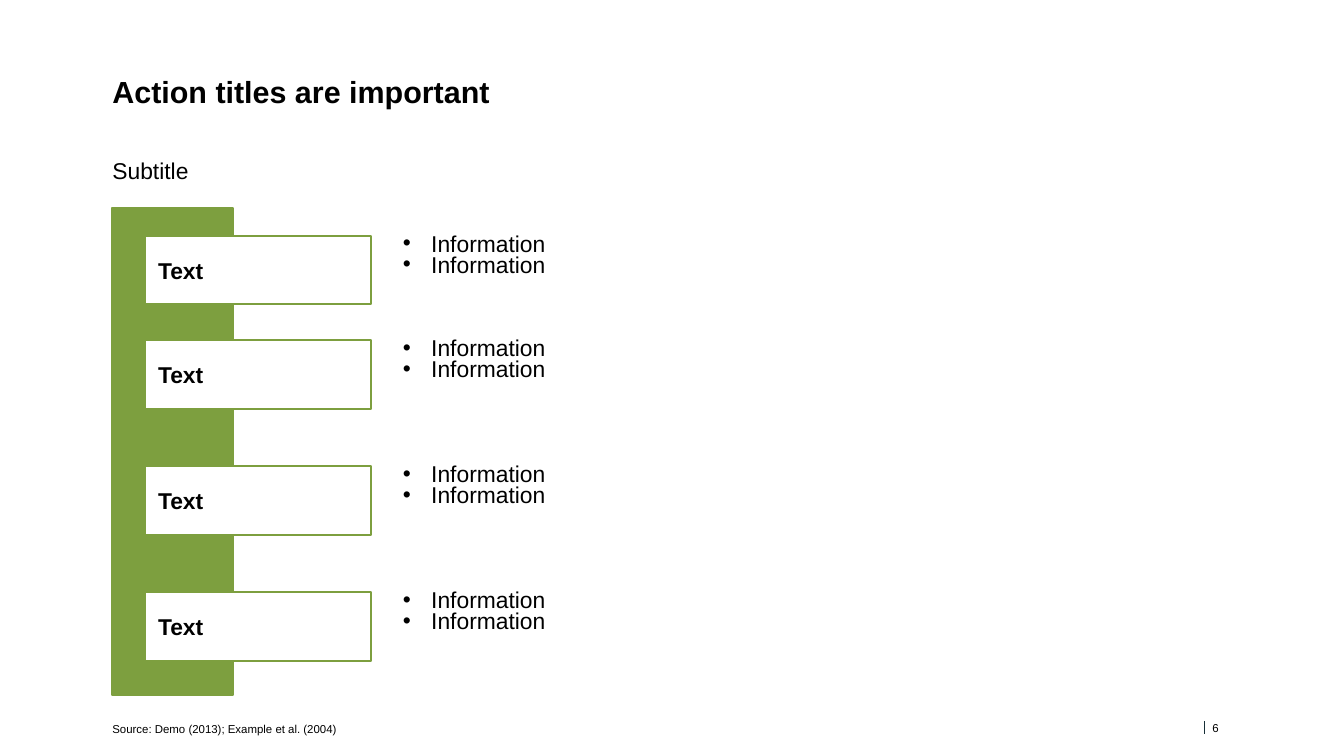
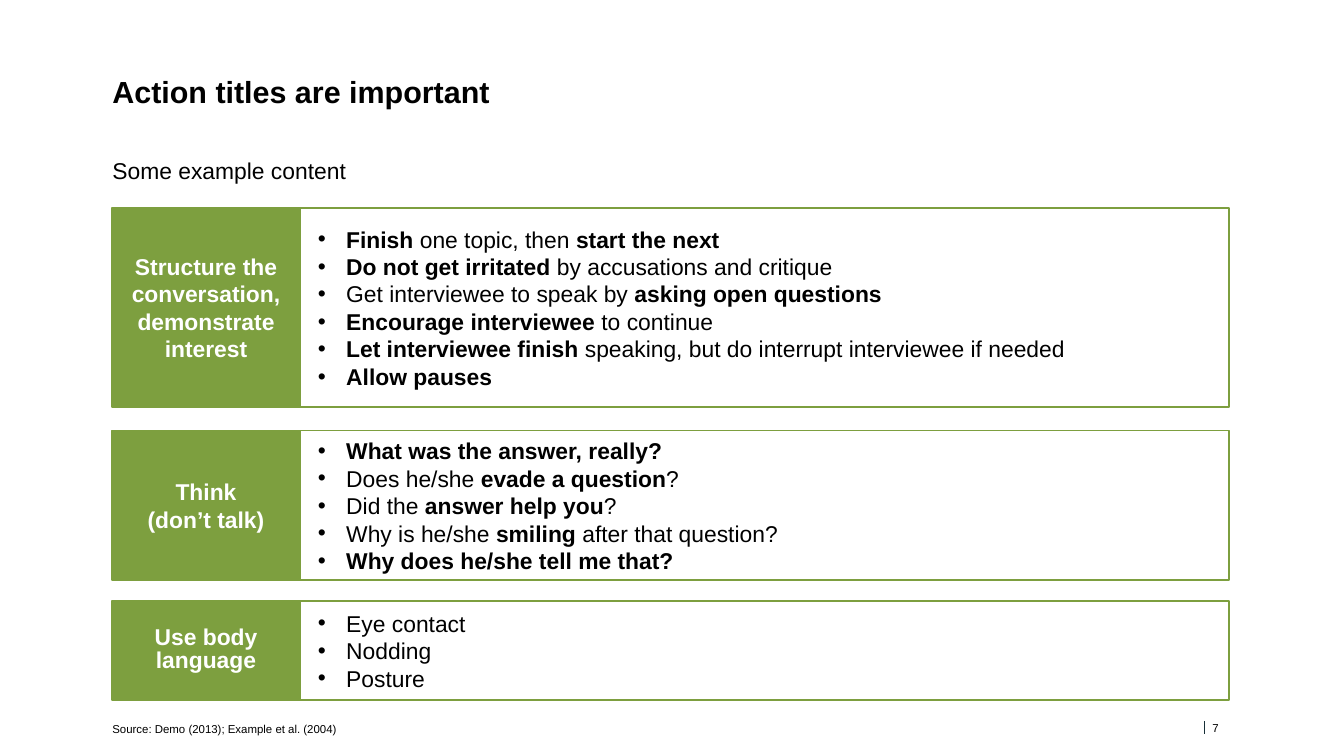
from lxml.etree import SubElement
from pptx import Presentation
from pptx.dml.color import RGBColor
from pptx.enum.shapes import MSO_CONNECTOR, MSO_SHAPE
from pptx.enum.text import MSO_ANCHOR, PP_ALIGN
from pptx.oxml.ns import qn
from pptx.util import Inches, Pt

COLORS = {"green": "7D9F3F", "white": "FFFFFF", "black": "000000", "rule": "172F37"}
FONT = "Arial"
LEFT = 1.23
BODY_TOP = 2.28


def add_box(page, area, lines=(), size=18, color="black", bold=None, fill=None,
            outlined=False, bullets=False, align=PP_ALIGN.LEFT,
            anchor=MSO_ANCHOR.TOP, insets=(0, 0, 0, 0), spacing=None):
    lengths = [Inches(value) for value in area]
    if outlined:
        box = page.shapes.add_shape(MSO_SHAPE.RECTANGLE, *lengths)
        box.shadow.inherit = False
        box.line.color.rgb = RGBColor.from_string(COLORS["green"])
        box.line.width = Pt(1.5)
    else:
        box = page.shapes.add_textbox(*lengths)
    if fill:
        box.fill.solid()
        box.fill.fore_color.rgb = RGBColor.from_string(COLORS[fill])
    else:
        box.fill.background()

    frame = box.text_frame
    frame.word_wrap = True
    frame.vertical_anchor = anchor
    frame.margin_left, frame.margin_top, frame.margin_right, frame.margin_bottom = (
        Inches(value) for value in insets)
    for index, line in enumerate(lines):
        para = frame.paragraphs[0] if index == 0 else frame.add_paragraph()
        if "**" in line:
            for part, words in enumerate(line.split("**")):
                if words:
                    span = para.add_run()
                    span.text = words
                    span.font.bold = part % 2 == 1
        else:
            para.text = line
        para.alignment = align
        if spacing:
            para.line_spacing = Pt(spacing)
        if bullets:
            properties = para._p.get_or_add_pPr()
            properties.set("marL", str(Inches(0.31)))
            properties.set("indent", str(-Inches(0.31)))
            SubElement(properties, qn("a:buFont"), typeface=FONT)
            SubElement(properties, qn("a:buChar"), char="•")
        para.font.name = FONT
        para.font.size = Pt(size)
        para.font.bold = bold
        para.font.color.rgb = RGBColor.from_string(COLORS[color])


def add_page(deck, subtitle, number):
    page = deck.slides.add_slide(deck.slide_layouts[6])
    rule = page.shapes.add_connector(
        MSO_CONNECTOR.STRAIGHT, Inches(13.18), Inches(7.89), Inches(13.18), Inches(8.03))
    rule.line.color.rgb = RGBColor.from_string(COLORS["rule"])
    rule.line.width = Pt(0.75)
    SubElement(rule._element.spPr, qn("a:effectLst"))
    add_box(page, (LEFT, 0.87, 12.23, 0.67), ["Action titles are important"],
            size=24, bold=True, spacing=24)
    add_box(page, (LEFT, 1.76, 12.23, 0.3), [subtitle], spacing=18)
    add_box(page, (13.27, 7.87, 0.54, 0.15), [str(number)], size=9, spacing=12)
    add_box(page, (LEFT, 7.83, 11.56, 0.22), ["Source: Demo (2013); Example et al. (2004)"],
            size=9, anchor=MSO_ANCHOR.BOTTOM, spacing=18)
    return page


deck = Presentation()
deck.slide_width = Inches(14.71)
deck.slide_height = Inches(8.27)

page = add_page(deck, "Subtitle", 6)
add_box(page, (LEFT, BODY_TOP, 1.32, 5.32), fill="green", outlined=True)
for top in (2.58, 3.72, 5.1, 6.48):
    add_box(page, (1.59, top, 2.47, 0.75), ["Text"], bold=True, fill="white",
            outlined=True, anchor=MSO_ANCHOR.MIDDLE, insets=(0.14, 0.05, 0.06, 0.05))
    add_box(page, (4.41, top, 6.54, 0.75), ["Information"] * 2, bullets=True, spacing=16.5)

page = add_page(deck, "Some example content", 7)
topics = [
    (BODY_TOP, 2.17, "Structure the conversation, demonstrate interest", None, [
        "**Finish **one topic, then **start the next**",
        "**Do not get irritated **by accusations and critique",
        "Get interviewee to speak by **asking open questions**",
        "**Encourage interviewee **to continue",
        "**Let interviewee finish **speaking, but do interrupt interviewee if needed",
        "**Allow pauses**",
    ]),
    (4.71, 1.64, "Think\v(don’t talk)", None, [
        "**What was the answer, really?**",
        "Does he/she **evade a question**?",
        "Did the **answer help you**?",
        "Why is he/she **smiling **after that question?",
        "**Why does he/she tell me that?**",
    ]),
    (6.57, 1.09, "Use body language", 18, ["Eye contact", "Nodding", "Posture"]),
]
label_width = 2.05
for top, height, label, label_spacing, points in topics:
    add_box(page, (LEFT, top, label_width, height), [label], color="white", bold=True,
            fill="green", outlined=True, align=PP_ALIGN.CENTER,
            anchor=MSO_ANCHOR.MIDDLE, spacing=label_spacing)
    add_box(page, (LEFT + label_width, top, 10.17, height), points, outlined=True,
            bullets=True, anchor=MSO_ANCHOR.MIDDLE, insets=(0.2, 0, 0.2, 0))

deck.save("out.pptx")
